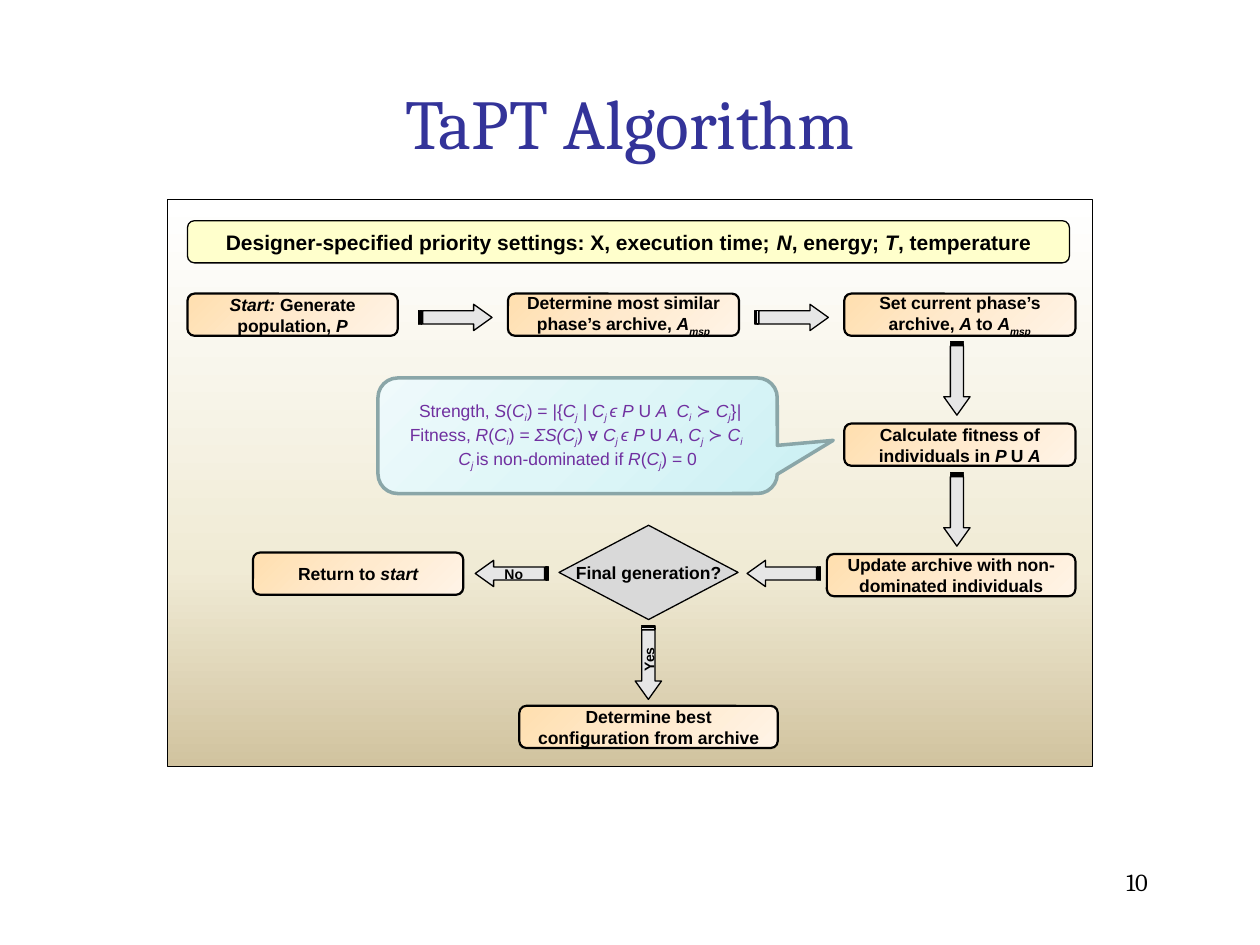
import dataclasses

import pptx
import pptx.util
import pptx.dml.color
import pptx.enum.shapes
import pptx.enum.text
import pptx.oxml

Cm, Pt = pptx.util.Cm, pptx.util.Pt
Kind = pptx.enum.shapes.MSO_SHAPE
Align = pptx.enum.text.PP_ALIGN
Mid = pptx.enum.text.MSO_ANCHOR.MIDDLE
NS = "http://schemas.openxmlformats.org/drawingml/2006/main"


@dataclasses.dataclass(frozen=True)
class Theme:
    head: str = "Cambria"
    body: str = "Arial"
    blue: str = "333399"
    purple: str = "7030A0"
    black: str = "000000"
    cream: str = "FFFFCC"
    grey: str = "D9D9D9"
    light: str = "E6E6E6"
    teal: str = "8AA6A8"
    panel: tuple = ((0, "FFEFD1"), (65, "F0EBD5"), (100, "D1C39F"))
    step: tuple = ((0, "FFDFAF"), (50, "FFEACE"), (100, "FFF4E7"))
    note: tuple = ((0, "CEF1F4"), (50, "DFF6F8"), (100, "EFFAFB"))
    title: int = 40
    page: int = 14
    large: int = 12
    text: int = 10
    small: int = 8


T = Theme()
LINEAR = '<a:lin ang="{}" scaled="0"/>'
CORNER = '<a:path path="circle"><a:fillToRect l="100000" t="100000"/></a:path>'


def rgb(code):
    return pptx.dml.color.RGBColor.from_string(code)


def blend(shape, stops, way):
    """Fill a shape with a gradient of (percent, colour) stops."""
    marks = "".join(f'<a:gs pos="{pos * 1000}"><a:srgbClr val="{code}"/></a:gs>'
                    for pos, code in stops)
    grad = pptx.oxml.parse_xml(f'<a:gradFill xmlns:a="{NS}" rotWithShape="1">'
                               f'<a:gsLst>{marks}</a:gsLst>{way}</a:gradFill>')
    shape.fill.background()
    props = shape._element.spPr
    props.replace(props.find(f"{{{NS}}}noFill"), grad)


def write(shape, lines, size, color=T.black, font=T.body, bold=False,
          align=Align.CENTER, wrap=True):
    """Add lines of text; *...* is italic and _..._ is subscript."""
    frame = shape.text_frame
    frame.word_wrap = wrap
    frame.vertical_anchor = Mid
    for num, line in enumerate(lines):
        para = frame.add_paragraph() if num else frame.paragraphs[0]
        para.alignment = align
        for i, part in enumerate(line.split("*")):
            for j, bit in enumerate(part.split("_")):
                if not bit:
                    continue
                run = para.add_run()
                run.text = bit
                run.font.name = font
                run.font.size = Pt(size)
                run.font.bold = bold
                run.font.italic = i % 2 == 1
                run.font.color.rgb = rgb(color)
                if j % 2:
                    run.font._element.set("baseline", "-25000")


def draw(slide, kind, x, y, wide, high, fill=None, width=0.75, line=T.black):
    shape = slide.shapes.add_shape(kind, Cm(x), Cm(y), Cm(wide), Cm(high))
    shape.shadow.inherit = False
    shape.line.color.rgb = rgb(line)
    shape.line.width = Pt(width)
    if fill:
        shape.fill.solid()
        shape.fill.fore_color.rgb = rgb(fill)
    return shape


def step(slide, x, y, wide, text):
    shape = draw(slide, Kind.ROUNDED_RECTANGLE, x, y, wide, 0.85, width=1.25)
    blend(shape, T.step, LINEAR.format(2700000))
    write(shape, [text], T.text, bold=True)


def arrow(slide, x, y, turn):
    """Draw a striped arrow centred on x, y."""
    wide, high = 1.48, 0.53
    shape = draw(slide, Kind.STRIPED_RIGHT_ARROW, x - wide / 2, y - high / 2,
                 wide, high, T.light)
    shape.adjustments[1] = 0.7
    shape.rotation = turn


def label(slide, x, y, text, turn=0):
    wide, high = 1, 0.6
    box = slide.shapes.add_textbox(Cm(x - wide / 2), Cm(y - high / 2),
                                   Cm(wide), Cm(high))
    box.rotation = turn
    write(box, [text], T.small, bold=True, wrap=False)


def main():
    deck = pptx.Presentation()
    deck.slide_width, deck.slide_height = Cm(25.4), Cm(19.05)
    slide = deck.slides.add_slide(deck.slide_layouts[5])

    # Title
    title = slide.shapes.title
    title.left, title.top = Cm(1.9), Cm(0.85)
    title.width, title.height = Cm(21.6), Cm(3.18)
    write(title, ["TaPT Algorithm"], T.title, T.blue, T.head)

    # Panel and banner
    panel = draw(slide, Kind.RECTANGLE, 3.38, 4.02, 18.64, 11.43)
    blend(panel, ((0, "FFFFFF"),) + T.panel[1:], LINEAR.format(5400000))
    banner = draw(slide, Kind.ROUNDED_RECTANGLE, 3.78, 4.45, 17.78, 0.85, T.cream)
    write(banner, ["Designer-specified priority settings: X, execution time; "
                   "*N*, energy; *T*, temperature"], T.large, bold=True, wrap=False)

    # Steps of the flow
    for x, y, wide, text in (
            (3.78, 5.92, 4.24, "*Start: *Generate population, *P*"),
            (10.24, 5.92, 4.66, "Determine most similar phase’s archive, *A_msp_*"),
            (17.02, 5.92, 4.66, "Set current phase’s archive, *A *to *A_msp_*"),
            (17.02, 8.54, 4.66, "Calculate fitness of individuals in *P *U *A*"),
            (16.67, 11.17, 5.01, "Update archive with non-dominated individuals"),
            (10.47, 14.23, 5.21, "Determine best configuration from archive"),
            (5.1, 11.14, 4.24, "Return to *start*")):
        step(slide, x, y, wide, text)

    # Decision
    choice = draw(slide, Kind.FLOWCHART_DECISION, 11.27, 10.59, 3.61, 1.9, T.grey)
    write(choice, ["Final generation?"], T.text, bold=True, wrap=False)

    # Arrows and their labels
    for x, y, turn in ((9.18, 6.4, 0), (15.96, 6.4, 0),
                       (19.29, 7.63, 90), (19.29, 10.27, 90),
                       (15.8, 11.56, 180), (10.32, 11.56, 180),
                       (13.07, 13.36, 90)):
        arrow(slide, x, y, turn)
    label(slide, 10.36, 11.58, "No")
    label(slide, 13.08, 13.29, "Yes", 270)

    # Note on fitness
    note = draw(slide, Kind.ROUNDED_RECTANGULAR_CALLOUT, 7.62, 7.62, 8.05, 2.33,
                width=2, line=T.teal)
    for num, value in enumerate((0.64, 0.04, 0.17)):
        note.adjustments[num] = value
    blend(note, T.note, CORNER)
    write(note, [
        " Strength, *S*(*C_i_*) = |{*C_j_ | C_j _ϵ P* U *A  C_i_* ≻ *C_j_*}*|*",
        "Fitness, *R*(*C_i_*) = *ƩS(C_j_*) ∀ *C_j _ϵ P* U *A*, *C_j_* ≻ *C_i _*",
        "*C_j _*is non-dominated if *R*(*C_j_*) = 0"], T.text, T.purple)

    # Page number
    page = slide.shapes.add_textbox(Cm(18.2), Cm(17.35), Cm(5.3), Cm(0.85))
    write(page, ["10 "], T.page, font=T.head, align=Align.RIGHT)

    deck.save("out.pptx")


if __name__ == "__main__":
    main()
